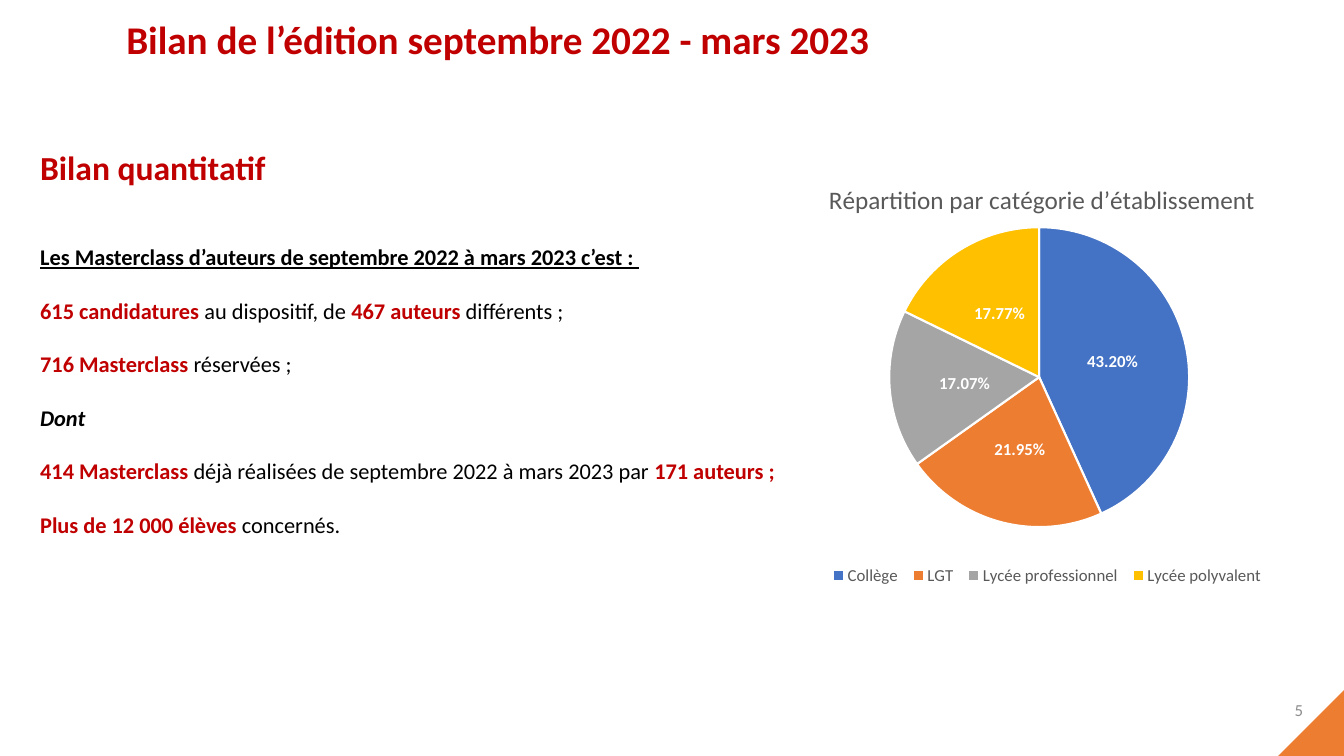
from dataclasses import dataclass

from lxml import etree
from pptx import Presentation
from pptx.chart.chart import Chart
from pptx.chart.data import CategoryChartData
from pptx.dml.color import RGBColor
from pptx.enum.chart import XL_CHART_TYPE, XL_LABEL_POSITION, XL_LEGEND_POSITION
from pptx.enum.shapes import MSO_SHAPE
from pptx.enum.text import MSO_ANCHOR, MSO_AUTO_SIZE, PP_ALIGN
from pptx.oxml.ns import qn
from pptx.slide import Slide
from pptx.text.text import TextFrame
from pptx.util import Pt

PIE = XL_CHART_TYPE.PIE
LABEL_CENTER = XL_LABEL_POSITION.CENTER
LEGEND_BOTTOM = XL_LEGEND_POSITION.BOTTOM
RIGHT_TRIANGLE = MSO_SHAPE.RIGHT_TRIANGLE
TOP, MIDDLE = MSO_ANCHOR.TOP, MSO_ANCHOR.MIDDLE
NO_AUTOFIT = MSO_AUTO_SIZE.NONE
LEFT, RIGHT = PP_ALIGN.LEFT, PP_ALIGN.RIGHT

FONT = "Calibri"
RED = RGBColor(0xC0, 0x00, 0x00)
BLACK = RGBColor(0x00, 0x00, 0x00)
WHITE = RGBColor(0xFF, 0xFF, 0xFF)
CHART_GREY = RGBColor(0x59, 0x59, 0x59)
NUMBER_GREY = RGBColor(0x8C, 0x8C, 0x8C)
BLUE = RGBColor(0x44, 0x72, 0xC4)
ORANGE = RGBColor(0xED, 0x7D, 0x31)
GREY = RGBColor(0xA5, 0xA5, 0xA5)
YELLOW = RGBColor(0xFF, 0xC0, 0x00)


@dataclass(frozen=True)
class Span:
    text: str
    color: RGBColor = BLACK
    bold: bool = False
    italic: bool = False
    underline: bool = False
    size: float = 16


@dataclass(frozen=True)
class Line:
    spans: tuple[Span, ...]
    space_before: float = 19


@dataclass(frozen=True)
class Slice:
    category: str
    share: float
    color: RGBColor


def key(text: str) -> Span:
    """Bold red key figure."""
    return Span(text, RED, bold=True)


TITLE = Line((Span("Bilan de l’édition septembre 2022 - mars 2023", RED, bold=True, size=28),), 0)
PAGE_NUMBER = Line((Span("5", NUMBER_GREY, size=12),), 0)
RESULTS = (
    Line((Span("Bilan quantitatif", RED, bold=True, size=24),), 0),
    Line((Span("Les Masterclass d’auteurs de septembre 2022 à mars 2023 c’est : ",
               bold=True, underline=True),), 40.5),
    Line((key("615 candidatures "), Span("au dispositif, de "),
          key("467 auteurs "), Span("différents ;"))),
    Line((key("716 Masterclass "), Span("réservées ;"))),
    Line((Span("Dont", bold=True, italic=True),)),
    Line((key("414 Masterclass "),
          Span("déjà réalisées de septembre 2022 à mars 2023 par "),
          key("171 auteurs ;"))),
    Line((key("Plus de 12 000 élèves "), Span("concernés."))),
)
SLICES = (
    Slice("Collège", 0.4320, BLUE),
    Slice("LGT", 0.2195, ORANGE),
    Slice("Lycée professionnel", 0.1707, GREY),
    Slice("Lycée polyvalent", 0.1777, YELLOW),
)


def place(shape, left: float, top: float, width: float, height: float) -> None:
    shape.left, shape.top = Pt(left), Pt(top)
    shape.width, shape.height = Pt(width), Pt(height)


def style_font(font, size: float, color: RGBColor, bold: bool = False) -> None:
    font.name, font.size, font.bold = FONT, Pt(size), bold
    font.color.rgb = color


def write_lines(frame: TextFrame, lines: tuple[Line, ...], align=LEFT, anchor=TOP) -> None:
    frame.word_wrap = True
    frame.auto_size = NO_AUTOFIT
    frame.vertical_anchor = anchor
    for index, line in enumerate(lines):
        para = frame.add_paragraph() if index else frame.paragraphs[0]
        properties = para._p.get_or_add_pPr()
        properties.set("marL", "0")
        properties.set("indent", "0")
        etree.SubElement(properties, qn("a:buNone"))
        para.alignment = align
        para.line_spacing = 1.0
        para.space_before = Pt(line.space_before)
        para.space_after = Pt(0)
        for span in line.spans:
            run = para.add_run()
            run.text = span.text
            style_font(run.font, span.size, span.color, span.bold)
            run.font.italic = span.italic
            run.font.underline = span.underline


def set_layout(element, position: int, inner: bool, **fractions: float) -> None:
    """Fix a chart part at fractions x, y, w, h of the chart area."""
    for old in element.findall(qn("c:layout")):
        element.remove(old)
    layout = etree.Element(qn("c:layout"))
    manual = etree.SubElement(layout, qn("c:manualLayout"))
    if inner:
        etree.SubElement(manual, qn("c:layoutTarget")).set("val", "inner")
    for mode in ("xMode", "yMode"):
        etree.SubElement(manual, qn(f"c:{mode}")).set("val", "edge")
    for name, value in fractions.items():
        etree.SubElement(manual, qn(f"c:{name}")).set("val", str(value))
    element.insert(position, layout)


def style_chart(chart: Chart) -> None:
    style_font(chart.font, 10, BLACK)
    chart.has_title = True
    title_run = chart.chart_title.text_frame.paragraphs[0].add_run()
    title_run.text = "Répartition par catégorie d’établissement"
    style_font(title_run.font, 18, CHART_GREY)
    chart.chart_title.include_in_layout = False

    chart.has_legend = True
    chart.legend.position = LEGEND_BOTTOM
    chart.legend.include_in_layout = False
    style_font(chart.legend.font, 12, CHART_GREY)
    set_layout(chart.legend._element, 1, False, x=0.1, y=0.88, w=0.82, h=0.07)
    plot_area = chart._chartSpace.chart.plotArea
    set_layout(plot_area, 0, True, x=0.22, y=0.14, w=0.55, h=0.67)

    plot = chart.plots[0]
    plot.vary_by_categories = True
    plot.has_data_labels = True
    labels = plot.data_labels
    labels.show_value = True
    labels.show_percentage = False
    labels.number_format = "0.00%"
    labels.number_format_is_linked = False
    labels.position = LABEL_CENTER
    style_font(labels.font, 12, WHITE, bold=True)
    for index, piece in enumerate(SLICES):
        point = plot.series[0].points[index].format
        point.fill.solid()
        point.fill.fore_color.rgb = piece.color
        point.line.color.rgb = WHITE
        point.line.width = Pt(1.5)


def add_pie(page: Slide) -> None:
    data = CategoryChartData(number_format="0.00%")
    data.categories = [piece.category for piece in SLICES]
    data.add_series("Series 1", [piece.share for piece in SLICES])
    graphic = page.shapes.add_chart(PIE, Pt(549.5), Pt(116.5), Pt(389.5), Pt(322), data)
    style_chart(graphic.chart)


def add_corner(page: Slide) -> None:
    corner = page.shapes.add_shape(RIGHT_TRIANGLE, Pt(912), Pt(493), Pt(48), Pt(48))
    corner.rotation = 270
    corner.shadow.inherit = False
    corner.fill.solid()
    corner.fill.fore_color.rgb = ORANGE
    corner.line.fill.background()


def main() -> None:
    deck = Presentation()
    deck.slide_width, deck.slide_height = Pt(960), Pt(540)
    page = deck.slides.add_slide(deck.slide_layouts[1])
    title, body = page.placeholders

    add_corner(page)
    number_box = page.shapes.add_textbox(Pt(744), Pt(492.5), Pt(194), Pt(29))
    write_lines(number_box.text_frame, (PAGE_NUMBER,), RIGHT, MIDDLE)
    place(body, 21.5, 101, 596, 291)
    write_lines(body.text_frame, RESULTS)
    add_pie(page)
    place(title, 83, 7, 704, 42)
    write_lines(title.text_frame, (TITLE,))

    deck.save("out.pptx")


if __name__ == "__main__":
    main()
